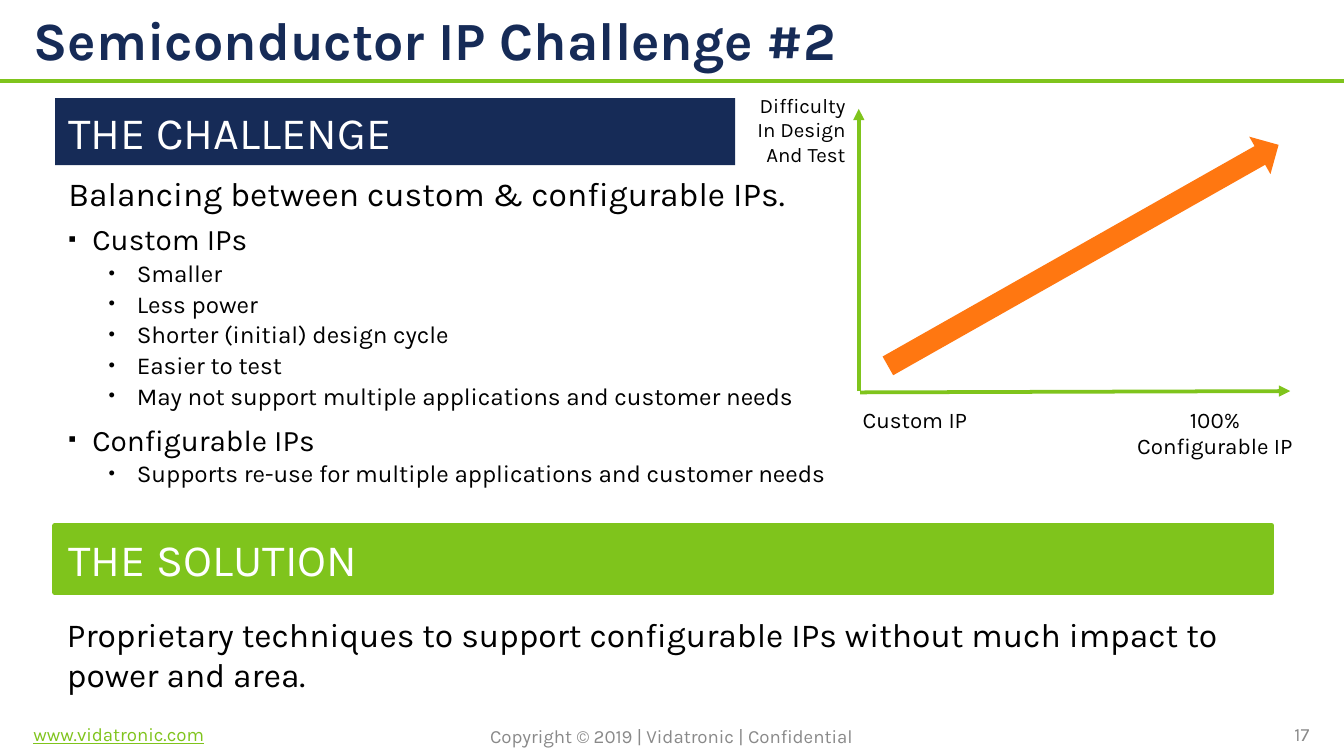
import pptx
import pptx.dml.color
import pptx.enum.shapes
import pptx.enum.text
import pptx.oxml.ns
import pptx.util
from lxml import etree
from pptx.util import Inches

NAVY = pptx.dml.color.RGBColor(0x16, 0x2B, 0x57)
GREEN = pptx.dml.color.RGBColor(0x7F, 0xC4, 0x1C)
ORANGE = pptx.dml.color.RGBColor(0xFF, 0x77, 0x11)
BLACK = pptx.dml.color.RGBColor(0, 0, 0)
GRAY = pptx.dml.color.RGBColor(0x89, 0x89, 0x89)
WHITE = pptx.dml.color.RGBColor(0xFF, 0xFF, 0xFF)

ALIGN = pptx.enum.text.PP_ALIGN
ANCHOR = pptx.enum.text.MSO_ANCHOR
SHAPE = pptx.enum.shapes.MSO_SHAPE


def add_xml(parent, tag, **attributes):
    return etree.SubElement(parent, pptx.oxml.ns.qn(tag), attributes)


class SlideBuilder:
    def __init__(self, slide, font_name):
        self.slide = slide
        self.font_name = font_name

    def style(self, paragraph, size, color, bold=False, underline=False):
        font = paragraph.font
        font.name = self.font_name
        font.size = pptx.util.Pt(size)
        font.color.rgb = color
        font.bold = bold
        font.underline = underline

    def frame(self, left, top, width, height, anchor=ANCHOR.TOP):
        box = self.slide.shapes.add_textbox(
            Inches(left), Inches(top), Inches(width), Inches(height))
        box.text_frame.word_wrap = True
        box.text_frame.vertical_anchor = anchor
        return box.text_frame

    def text(self, place, words, size, color=BLACK, align=ALIGN.LEFT,
             anchor=ANCHOR.TOP, **emphasis):
        paragraph = self.frame(*place, anchor=anchor).paragraphs[0]
        paragraph.text = words
        paragraph.alignment = align
        self.style(paragraph, size, color, **emphasis)

    def bullet(self, frame, words, level, before=0.0):
        """Add a bulleted paragraph: level 0 is a topic, level 1 a detail."""
        mark, size, margin, hanging = (
            ("▪", 16, 0.18, 0.18), ("•", 13, 0.51, 0.21))[level]
        paragraph = frame.add_paragraph()
        paragraph.text = words
        paragraph.level = level
        paragraph.space_before = pptx.util.Pt(before)
        properties = paragraph._p.get_or_add_pPr()
        properties.set("marL", str(Inches(margin)))
        properties.set("indent", str(-Inches(hanging)))
        add_xml(properties, "a:buSzPct", val="75000")
        add_xml(properties, "a:buFont", typeface="Arial")
        add_xml(properties, "a:buChar", char=mark)
        self.style(paragraph, size, BLACK)

    def shape(self, kind, place, fill, outline=0):
        shape = self.slide.shapes.add_shape(kind, *map(Inches, place))
        shape.shadow.inherit = False
        shape.fill.solid()
        shape.fill.fore_color.rgb = fill
        if outline:
            shape.line.color.rgb = fill
            shape.line.width = pptx.util.Pt(outline)
        else:
            shape.line.fill.background()
        return shape

    def banner(self, place, words, fill, outline=0):
        frame = self.shape(SHAPE.RECTANGLE, place, fill, outline).text_frame
        frame.word_wrap = True
        frame.vertical_anchor = ANCHOR.TOP
        heading = frame.paragraphs[0]
        heading.text = words
        heading.alignment = ALIGN.LEFT
        self.style(heading, 24, WHITE)

    def line(self, start, end, width, arrow=False):
        connector = self.slide.shapes.add_connector(
            pptx.enum.shapes.MSO_CONNECTOR.STRAIGHT,
            *map(Inches, start + end))
        connector.line.color.rgb = GREEN
        connector.line.width = pptx.util.Pt(width)
        if arrow:
            add_xml(connector.line._get_or_add_ln(), "a:tailEnd", type="triangle")
        add_xml(connector._element.spPr, "a:effectLst")


def main():
    presentation = pptx.Presentation()
    presentation.slide_width = Inches(10)
    presentation.slide_height = Inches(10) * 9 // 16
    slide = presentation.slides.add_slide(presentation.slide_layouts[6])
    builder = SlideBuilder(slide, "Karla")

    # Title and footer
    builder.line((0, 0.6), (10, 0.6), 2.25)
    builder.text((0.15, 5.36, 3.17, 0.21), "www.vidatronic.com", 10, GREEN,
                 anchor=ANCHOR.MIDDLE, underline=True)
    builder.text((0.15, 0, 9.38, 0.58), "Semiconductor IP Challenge #2", 28.8,
                 NAVY, anchor=ANCHOR.MIDDLE, bold=True)

    # Challenge
    challenge = builder.frame(0.41, 1.24, 6.69, 2.62)
    summary = challenge.paragraphs[0]
    summary.text = "Balancing between custom & configurable IPs."
    summary.space_after = pptx.util.Pt(4)
    builder.style(summary, 18, BLACK)
    topics = (
        ("Custom IPs", 0, (
            "Smaller",
            "Less power",
            "Shorter (initial) design cycle",
            "Easier to test",
            "May not support multiple applications and customer needs")),
        ("Configurable IPs", 6, (
            "Supports re-use for multiple applications and customer needs",)),
    )
    for topic, before, details in topics:
        builder.bullet(challenge, topic, 0, before)
        for detail in details:
            builder.bullet(challenge, detail, 1, 0.8)

    builder.text((3.41, 5.37, 3.17, 0.21),
                 "Copyright © 2019 | Vidatronic | Confidential", 10, GRAY,
                 ALIGN.CENTER, ANCHOR.MIDDLE)
    builder.text((6.67, 5.36, 3.17, 0.2), "17", 10, GRAY,
                 ALIGN.RIGHT, ANCHOR.MIDDLE)

    # Difficulty diagram
    builder.line((6.4, 2.92), (9.6, 2.91), 2, arrow=True)
    builder.line((6.39, 2.91), (6.39, 0.81), 2, arrow=True)
    trend = builder.shape(SHAPE.DOWN_ARROW, (7.9, 0.23, 0.32, 3.34), ORANGE)
    trend.rotation = 240.5
    builder.text((6.32, 2.97, 1.13, 0.3), "Custom IP", 12)
    builder.text((8.34, 2.97, 1.4, 0.5), "100% Configurable IP", 12,
                 align=ALIGN.CENTER)
    builder.text((5.52, 0.64, 0.87, 0.66), "Difficulty In Design And Test", 11,
                 align=ALIGN.RIGHT)

    # Solution
    builder.text((0.4, 4.52, 9.06, 0.66),
                 "Proprietary techniques to support configurable IPs without "
                 "much impact to power and area.", 18)
    builder.banner((0.41, 0.73, 5.06, 0.5), "THE CHALLENGE", NAVY)
    builder.banner((0.41, 3.91, 9.05, 0.5), "THE SOLUTION", GREEN, outline=3)

    presentation.save("out.pptx")


if __name__ == "__main__":
    main()
